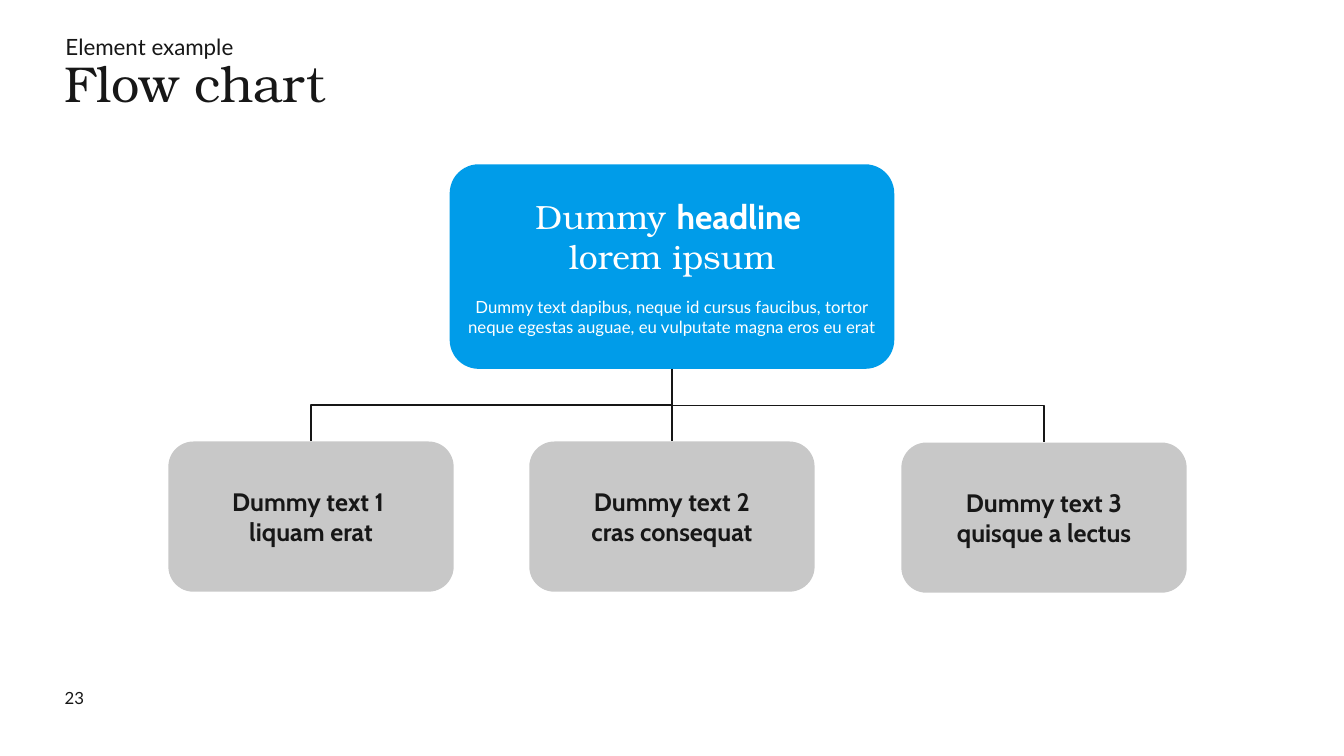
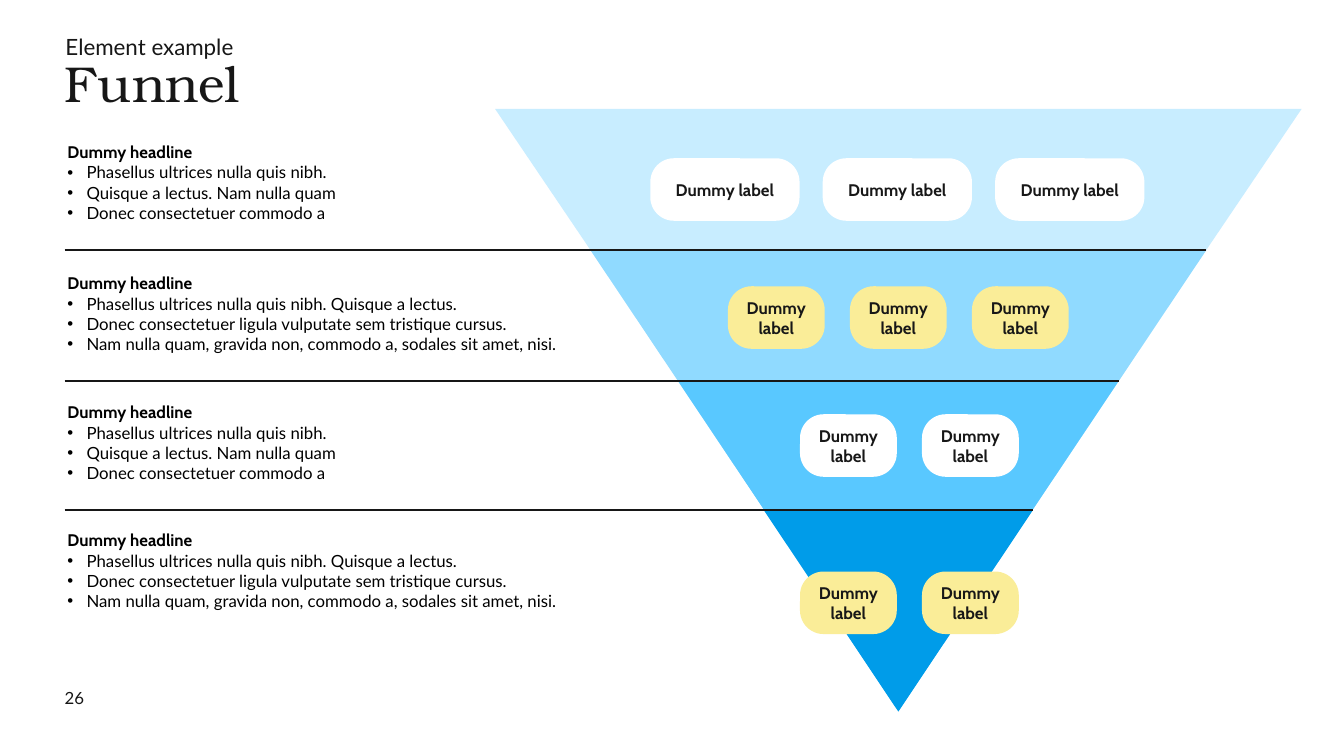
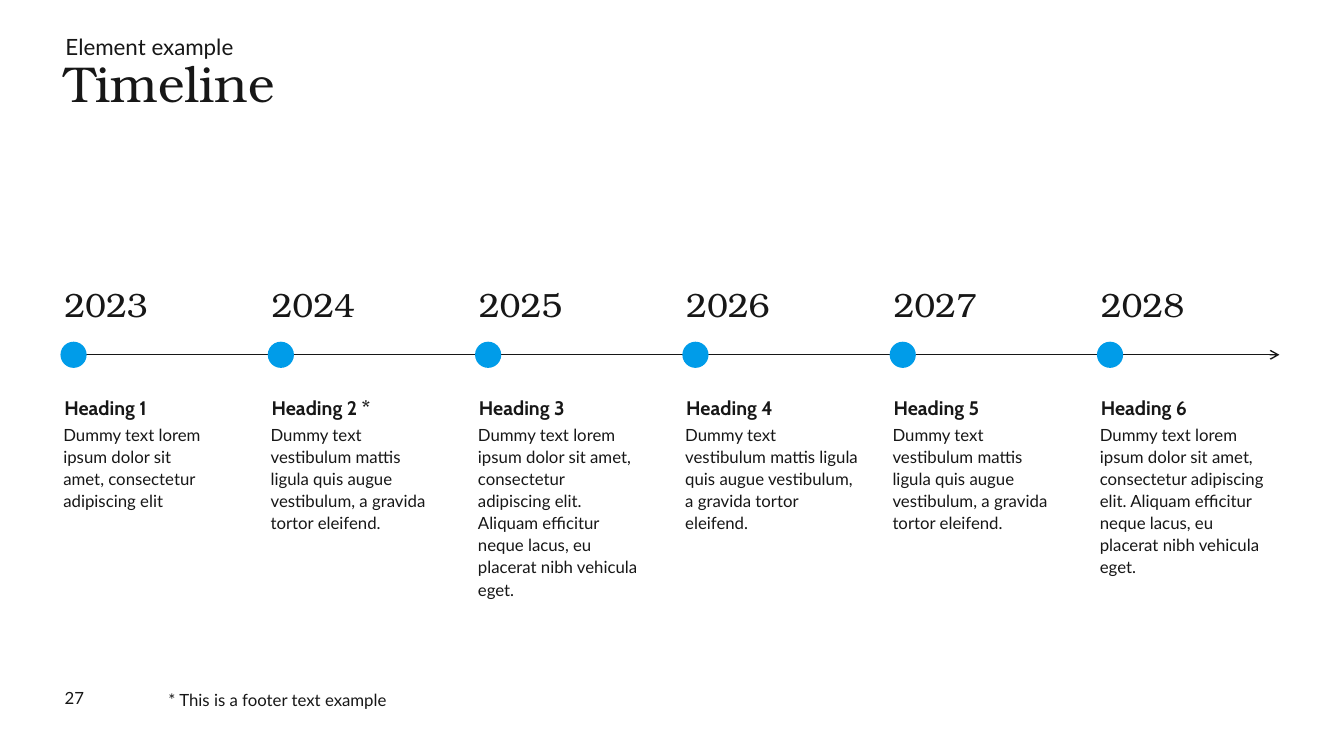
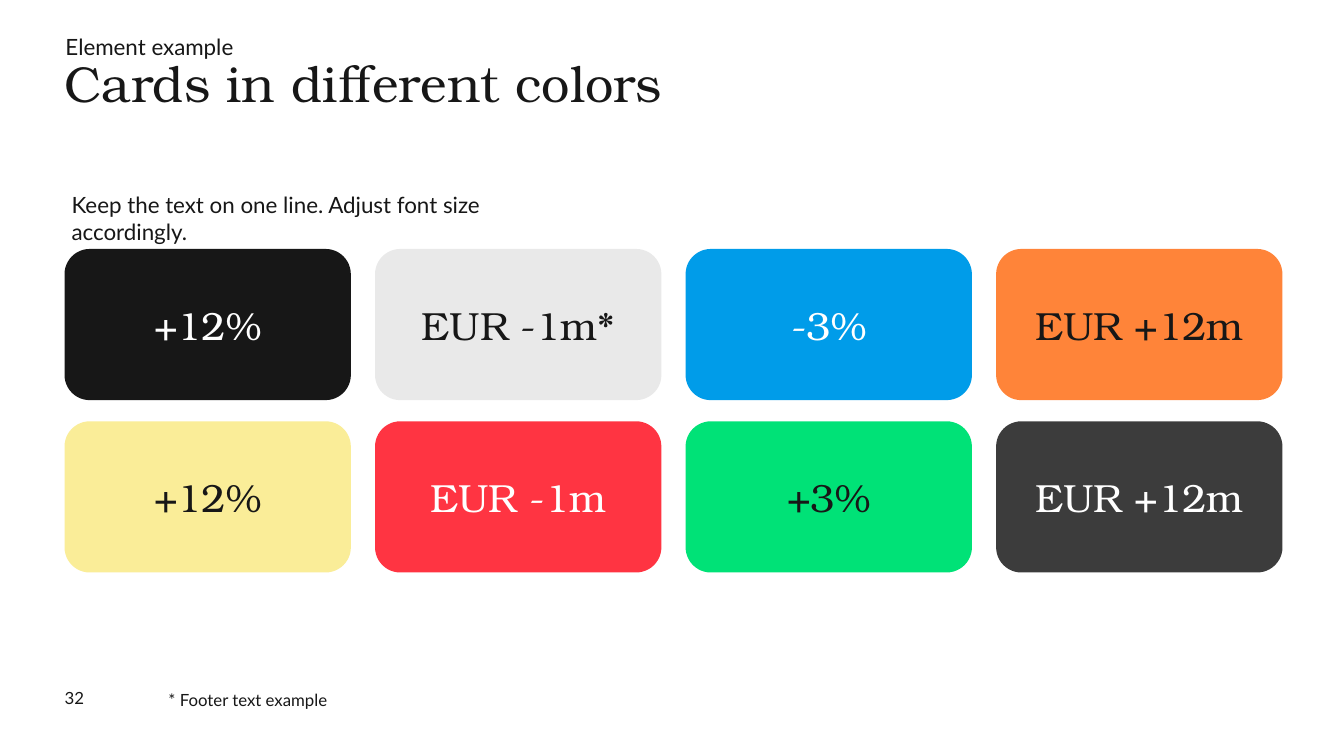
from dataclasses import dataclass, replace

from lxml import etree
from pptx import Presentation
from pptx.dml.color import RGBColor
from pptx.enum import shapes, text
from pptx.oxml import ns
from pptx.util import Inches, Pt


@dataclass(frozen=True)
class Style:
    font: str
    size: int
    color: str
    bold: bool = False


class Theme:
    ink, white, black = "171717", "FFFFFF", "000000"
    blue, gray, yellow = "009CE9", "C8C8C8", "FAED98"
    pale_gray, orange, red, green, charcoal = "E9E9E9", "FF8439", "FF3442", "00E277", "3C3C3C"
    funnel = ["C8EDFF", "90DAFF", "59C8FF", blue]
    serif, sans, accent = "TeX Gyre Bonum", "Lato", "Cabin"
    title = Style(serif, 36, ink)
    eyebrow = Style(sans, 16, ink)
    small = Style(sans, 12, ink)
    year = Style(serif, 24, ink)
    heading = Style(accent, 14, ink, True)
    label = Style(accent, 12, ink, True)
    box = Style(accent, 18, ink, True)
    card = Style(serif, 28, ink)
    root = Style(serif, 24, white)
    root_bold = Style(accent, 24, white, True)
    root_body = Style(sans, 12, white)
    list_head = Style(accent, 12, black, True)
    list_item = Style(sans, 12, black)
    title_spacing = Pt(43.2)
    text_spacing = 1.1


MARGIN = 0.64
EYEBROW = "Element example"

ROOT_HEADLINE = [
    [("Dummy ", Theme.root), ("headline ", Theme.root_bold)],
    [("lorem ipsum", Theme.root)],
]
ROOT_BODY = "Dummy text dapibus, neque id cursus faucibus, tortor neque egestas auguae, eu vulputate magna eros eu erat"
CHILDREN = [
    (1.67, 4.38, ["Dummy text 1 ", "liquam erat"]),
    (5.25, 4.38, ["Dummy text 2", "cras consequat"]),
    (8.94, 4.39, ["Dummy text 3", "quisque a lectus"]),
]

SHORT_LIST = [
    "Phasellus ultrices nulla quis nibh.",
    "Quisque a lectus. Nam nulla quam",
    "Donec consectetuer commodo a",
]
LONG_LIST = [
    "Phasellus ultrices nulla quis nibh. Quisque a lectus.",
    "Donec consectetuer ligula vulputate sem tristique cursus.",
    "Nam nulla quam, gravida non, commodo a, sodales sit amet, nisi.",
]
LIST_HEADLINE = "Dummy headline"
LISTS = [(1.36, SHORT_LIST), (2.66, LONG_LIST), (3.94, SHORT_LIST), (5.21, LONG_LIST)]
FUNNEL_CENTER = 8.91
FUNNEL_TIERS = [(1.08, 8, 5.92), (2.48, 6.11, 4.57), (3.78, 4.37, 3.27), (5.06, 2.67, 2)]
PILL_LABEL = "Dummy label"
PILL_ROWS = [
    (1.57, 8.9, 3, 1.71, 1.48, Theme.white),
    (2.84, 8.91, 3, 1.21, 0.96, Theme.yellow),
    (4.11, 9.02, 2, 1.21, 0.96, Theme.white),
    (5.67, 9.02, 2, 1.21, 0.96, Theme.yellow),
]

VESTIBULUM = "Dummy text vestibulum mattis ligula quis augue vestibulum, a gravida tortor eleifend."
ALIQUAM = "Dummy text lorem ipsum dolor sit amet, consectetur adipiscing elit. Aliquam efficitur neque lacus, eu placerat nibh vehicula eget."
MILESTONES = [
    ("2023", "Heading 1", "Dummy text lorem ipsum dolor sit amet, consectetur adipiscing elit", 1.6),
    ("2024", "Heading 2 *", VESTIBULUM, 1.8),
    ("2025", "Heading 3", ALIQUAM, 1.81),
    ("2026", "Heading 4", VESTIBULUM, 1.94),
    ("2027", "Heading 5", VESTIBULUM, 1.82),
    ("2028", "Heading 6", ALIQUAM, 1.88),
]
FIRST_DOT, LAST_DOT = 0.6, 10.88

CARDS = [
    [
        ("+12%", Theme.ink, Theme.white),
        ("EUR -1m*", Theme.pale_gray, Theme.ink),
        ("-3%", Theme.blue, Theme.white),
        ("EUR +12m", Theme.orange, Theme.ink),
    ],
    [
        ("+12%", Theme.yellow, Theme.ink),
        ("EUR -1m", Theme.red, Theme.white),
        ("+3%", Theme.green, Theme.ink),
        ("EUR +12m", Theme.charcoal, Theme.white),
    ],
]
CARD_HINT = "Keep the text on one line. Adjust font size accordingly."


def inches(*values):
    return [Inches(value) for value in values]


def style_run(run, style):
    run.font.name = style.font
    run.font.size = Pt(style.size)
    run.font.bold = style.bold
    run.font.color.rgb = RGBColor.from_string(style.color)


def write(frame, lines, align=text.PP_ALIGN.LEFT, spacing=None):
    frame.word_wrap = True
    for index, line in enumerate(lines):
        paragraph = frame.paragraphs[0] if index == 0 else frame.add_paragraph()
        paragraph.alignment = align
        if spacing:
            paragraph.line_spacing = spacing
        for content, style in line:
            run = paragraph.add_run()
            run.text = content
            style_run(run, style)


def remove_insets(frame):
    frame.margin_left = frame.margin_right = frame.margin_top = frame.margin_bottom = 0


def add_text(slide, place, lines, spacing=None, inset=True):
    frame = slide.shapes.add_textbox(*inches(*place)).text_frame
    if not inset:
        remove_insets(frame)
    write(frame, lines, spacing=spacing)
    return frame


def add_filled(slide, kind, place, fill):
    shape = slide.shapes.add_shape(kind, *inches(*place))
    shape.shadow.inherit = False
    shape.fill.solid()
    shape.fill.fore_color.rgb = RGBColor.from_string(fill)
    shape.line.fill.background()
    return shape


def add_card(slide, place, fill, lines, corner=0.167):
    shape = add_filled(slide, shapes.MSO_SHAPE.ROUNDED_RECTANGLE, place, fill)
    shape.adjustments[0] = corner
    shape.text_frame.vertical_anchor = text.MSO_ANCHOR.MIDDLE
    write(shape.text_frame, lines, text.PP_ALIGN.CENTER)
    return shape


def add_line(slide, start, end, kind=shapes.MSO_CONNECTOR.STRAIGHT):
    connector = slide.shapes.add_connector(kind, *inches(*start, *end))
    connector.line.color.rgb = RGBColor.from_string(Theme.ink)
    connector.line.width = Pt(1)
    etree.SubElement(connector._element.spPr, ns.qn("a:effectLst"))
    return connector


def add_branch(slide, parent, child):
    start_x, start_y = parent.left + parent.width // 2, parent.top + parent.height
    end_x, end_y = child.left + child.width // 2, child.top
    run, drop = abs(end_x - start_x), end_y - start_y
    straight = run < Inches(0.02)
    kind = shapes.MSO_CONNECTOR.STRAIGHT if straight else shapes.MSO_CONNECTOR.ELBOW
    connector = add_line(slide, (0, 0), (1, 1), kind)
    connector.begin_connect(parent, 2)
    connector.end_connect(child, 0)
    if not straight:
        to_right = end_x > start_x
        connector.left = (start_x + end_x - drop) // 2
        connector.top = (start_y + end_y - run) // 2
        connector.width, connector.height = drop, run
        frame = connector._element.spPr.xfrm
        frame.rot = 270 if to_right else 90
        frame.flipH = to_right


def add_bullet(paragraph):
    properties = paragraph._p.get_or_add_pPr()
    properties.set("marL", str(Inches(0.19)))
    properties.set("indent", str(-Inches(0.19)))
    etree.SubElement(properties, ns.qn("a:buFont"), typeface="Arial")
    etree.SubElement(properties, ns.qn("a:buChar"), char="•")


def new_slide(presentation, title, number, footer=None):
    slide = presentation.slides.add_slide(presentation.slide_layouts[5])
    shape = slide.shapes.title
    shape.left, shape.top, shape.width, shape.height = inches(MARGIN, 0.52, 12.05, 0.95)
    frame = shape.text_frame
    remove_insets(frame)
    frame.auto_size = text.MSO_AUTO_SIZE.NONE
    frame.vertical_anchor = text.MSO_ANCHOR.TOP
    write(frame, [[(title, Theme.title)]], spacing=Theme.title_spacing)
    add_text(slide, (0.65, 0.3, 12.04, 0.22), [[(EYEBROW, Theme.eyebrow)]], Theme.text_spacing, False)
    add_text(slide, (MARGIN, 6.82, 1.02, 0.2), [[(number, Theme.small)]], inset=False)
    if footer:
        add_text(slide, (1.67, 6.82, 8.98, 0.2), [[(footer, Theme.small)]], Theme.text_spacing, False)
    return slide


def build_flow_chart(presentation):
    slide = new_slide(presentation, "Flow chart", "23")
    lines = ROOT_HEADLINE + [[(ROOT_BODY, Theme.root_body)]]
    root = add_card(slide, (4.46, 1.63, 4.41, 2.03), Theme.blue, lines, 0.142)
    root.text_frame.paragraphs[-1].space_before = Pt(14.4)
    for left, top, labels in CHILDREN:
        lines = [[(label, Theme.box)] for label in labels]
        child = add_card(slide, (left, top, 2.83, 1.49), Theme.gray, lines)
        add_branch(slide, root, child)


def build_funnel(presentation):
    slide = new_slide(presentation, "Funnel", "26")
    for (top, width, height), fill in zip(FUNNEL_TIERS, Theme.funnel):
        place = (FUNNEL_CENTER - width / 2, top, width, height)
        add_filled(slide, shapes.MSO_SHAPE.FLOWCHART_EXTRACT, place, fill).rotation = 180
    for top, width, _ in FUNNEL_TIERS[1:]:
        add_line(slide, (MARGIN, top), (FUNNEL_CENTER + width / 2, top))
    for top, center, count, pitch, width, fill in PILL_ROWS:
        first = center - (count - 1) * pitch / 2 - width / 2
        for index in range(count):
            place = (first + index * pitch, top, width, 0.62)
            add_card(slide, place, fill, [[(PILL_LABEL, Theme.label)]], 0.377)
    for top, items in LISTS:
        lines = [[(LIST_HEADLINE, Theme.list_head)]] + [[(item, Theme.list_item)] for item in items]
        frame = add_text(slide, (0.57, top, 5.69, 0.91), lines)
        for paragraph in frame.paragraphs[1:]:
            add_bullet(paragraph)


def build_timeline(presentation):
    slide = new_slide(presentation, "Timeline", "27", "* This is a footer text example")
    axis = add_line(slide, (MARGIN, 3.52), (12.69, 3.52))
    etree.SubElement(axis.line._get_or_add_ln(), ns.qn("a:tailEnd"), type="arrow")
    pitch = (LAST_DOT - FIRST_DOT) / (len(MILESTONES) - 1)
    for index, (year, heading, body, width) in enumerate(MILESTONES):
        left = FIRST_DOT + index * pitch
        add_filled(slide, shapes.MSO_SHAPE.OVAL, (left, 3.39, 0.26, 0.26), Theme.blue)
        for content, style, offset, top, wide, high in [
            (year, Theme.year, 0.06, 2.73, 1.06, 0.37),
            (heading, Theme.heading, 0.06, 3.86, 1.8, 0.37),
            (body, Theme.small, 0.07, 4.14, width, 1.67),
        ]:
            add_text(slide, (left - offset, top, wide, high), [[(content, style)]], Theme.text_spacing)


def build_cards(presentation):
    slide = new_slide(presentation, "Cards in different colors", "32", "* Footer text example")
    for row, cards in enumerate(CARDS):
        for column, (value, fill, color) in enumerate(cards):
            place = (MARGIN + column * 3.08, 2.47 + row * 1.71, 2.84, 1.5)
            add_card(slide, place, fill, [[(value, replace(Theme.card, color=color))]])
    add_text(slide, (0.71, 1.9, 5.12, 0.27), [[(CARD_HINT, Theme.eyebrow)]], inset=False)


def main():
    presentation = Presentation()
    presentation.slide_width, presentation.slide_height = inches(13.33, 7.5)
    for build in (build_flow_chart, build_funnel, build_timeline, build_cards):
        build(presentation)
    presentation.save("out.pptx")


if __name__ == "__main__":
    main()
